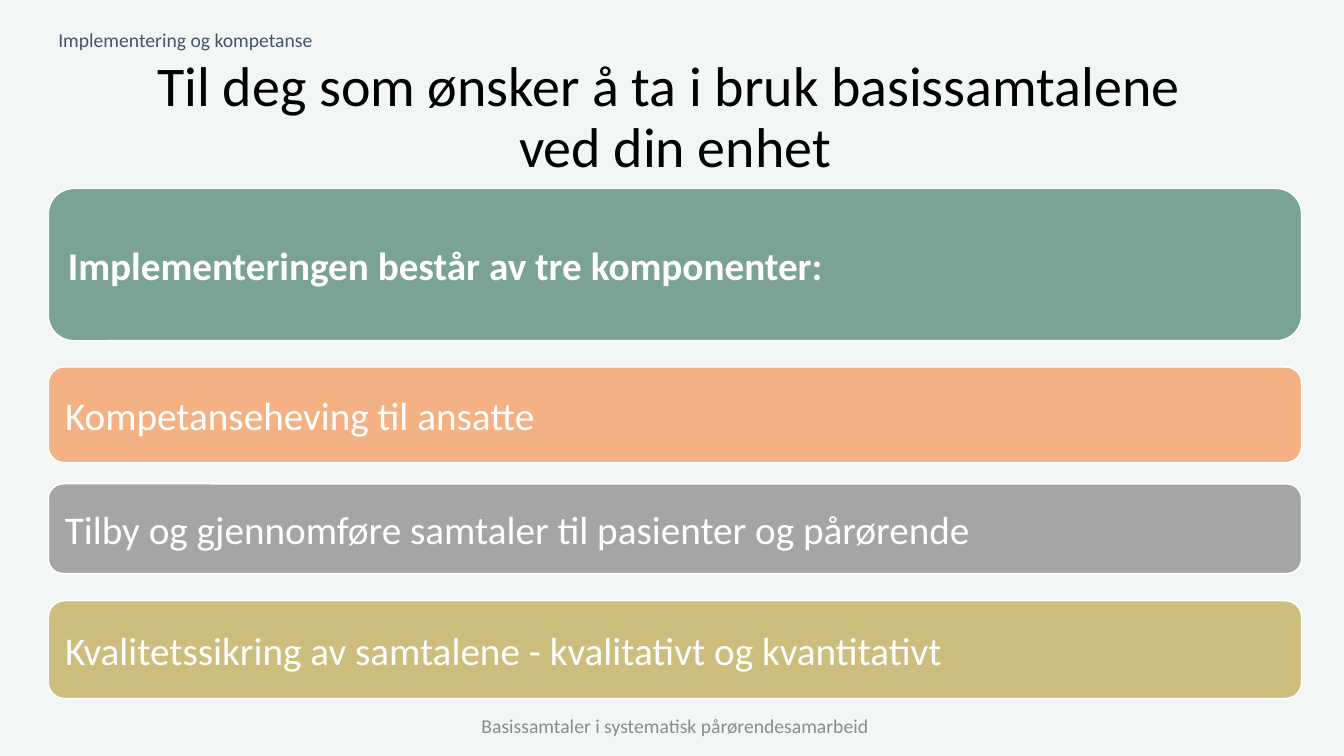
"""Build the slide on the three components of implementing basissamtalene."""
from pptx import Presentation
from pptx import util as u
from pptx.dml.color import RGBColor
from pptx.enum import shapes, text

BACKGROUND = RGBColor(0xF2, 0xF6, 0xF4)
BLACK = RGBColor(0x00, 0x00, 0x00)
WHITE = RGBColor(0xFF, 0xFF, 0xFF)
SLATE = RGBColor(0x44, 0x54, 0x6A)
FOOTER_GREY = RGBColor(0x8C, 0x8C, 0x8C)
GREEN = RGBColor(0x7B, 0xA2, 0x96)
ORANGE = RGBColor(0xF4, 0xB1, 0x83)
GREY = RGBColor(0xA5, 0xA5, 0xA5)
SAND = RGBColor(0xCD, 0xBE, 0x7D)

MARGIN, WIDTH = u.Inches(0.48), u.Inches(12.43)
LEFT, CENTER = text.PP_ALIGN.LEFT, text.PP_ALIGN.CENTER


def write(box, words, size, color, align, anchor, bold=False):
    """Fill a box with one formatted paragraph."""
    frame = box.text_frame
    frame.text = words
    frame.word_wrap = True
    frame.auto_size = text.MSO_AUTO_SIZE.NONE
    frame.vertical_anchor = anchor
    para = frame.paragraphs[0]
    para.alignment = align
    para.line_spacing = 0.9
    for span in para.runs:
        span.font.name = "Calibri"
        span.font.size = u.Pt(size)
        span.font.bold = bold
        span.font.color.rgb = color


deck = Presentation()
deck.slide_width, deck.slide_height = u.Inches(13.33), u.Inches(7.5)
page = deck.slides.add_slide(deck.slide_layouts[5])
page.background.fill.solid()
page.background.fill.fore_color.rgb = BACKGROUND

title = page.shapes.title
title.left, title.top = MARGIN, u.Inches(0.83)
title.width, title.height = WIDTH, u.Inches(0.7)
write(title, "Til deg som ønsker å ta i bruk basissamtalene \vved din enhet",
      40, BLACK, CENTER, text.MSO_ANCHOR.MIDDLE)

section = page.shapes.add_textbox(MARGIN, u.Inches(0.25), u.Inches(7.15), u.Inches(0.28))
write(section, "Implementering og kompetanse", 14, SLATE, LEFT, text.MSO_ANCHOR.TOP)

components = [
    (1.87, 1.51, GREEN, "Implementeringen består av tre komponenter:"),
    (3.64, 0.95, ORANGE, "Kompetanseheving til ansatte"),
    (4.8, 0.89, GREY, "Tilby og gjennomføre samtaler til pasienter og pårørende"),
    (5.96, 0.97, SAND, "Kvalitetssikring av samtalene - kvalitativt og kvantitativt"),
]
for top, height, color, words in components:
    bar = page.shapes.add_shape(shapes.MSO_SHAPE.ROUNDED_RECTANGLE,
                                MARGIN, u.Inches(top), WIDTH, u.Inches(height))
    bar.shadow.inherit = False
    bar.fill.solid()
    bar.fill.fore_color.rgb = color
    bar.line.color.rgb = WHITE
    bar.line.width = u.Pt(1)
    write(bar, words, 28, WHITE, LEFT, text.MSO_ANCHOR.MIDDLE, bold=color == GREEN)
    frame = bar.text_frame
    frame.margin_left = frame.margin_right = frame.margin_bottom = u.Inches(0.12)
    frame.margin_top = u.Inches(0.18)

footer_width = u.Inches(10.95)
footer = page.shapes.add_textbox((deck.slide_width - footer_width) // 2 + u.Inches(0.03),
                                 u.Inches(7.06), footer_width, u.Inches(0.43))
write(footer, "Basissamtaler i systematisk pårørendesamarbeid",
      14, FOOTER_GREY, CENTER, text.MSO_ANCHOR.TOP)

deck.save("out.pptx")
